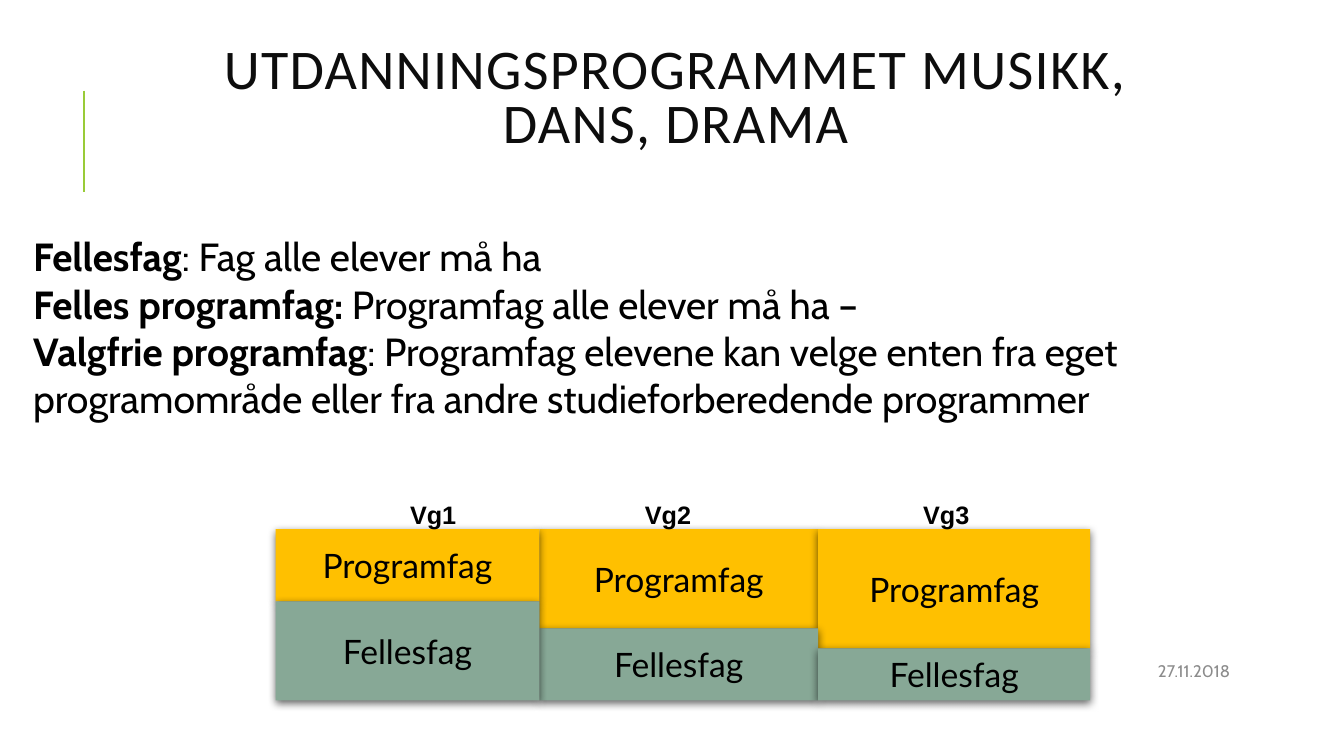
from dataclasses import dataclass

from lxml.etree import SubElement
from pptx import Presentation
from pptx.dml.color import RGBColor
from pptx.enum.shapes import MSO_CONNECTOR, MSO_SHAPE
from pptx.enum.text import MSO_ANCHOR, PP_ALIGN
from pptx.oxml.ns import qn
from pptx.util import Inches, Pt

COLS, ROWS = 80, 45


@dataclass(frozen=True)
class Theme:
    ink: str = "000000"
    head: str = "0D0D0D"
    faint: str = "8C8C8C"
    line: str = "99CB38"
    gold: str = "FFC000"
    sage: str = "87A896"
    title: int = 40
    body: int = 28
    block: int = 24
    label: int = 18
    date: int = 12


def write(frame, lines, font, size, color, align=PP_ALIGN.LEFT,
          anchor=MSO_ANCHOR.TOP, wrap=True, space=None, track=None):
    frame.word_wrap = wrap
    frame.vertical_anchor = anchor
    for place, line in enumerate(lines):
        para = frame.add_paragraph() if place else frame.paragraphs[0]
        para.alignment = align
        if space:
            para.line_spacing = space
        for text, bold in line:
            run = para.add_run()
            run.text = text
            run.font.name = font
            run.font.size = Pt(size)
            run.font.bold = bold
            run.font.color.rgb = RGBColor.from_string(color)
            if track:
                run.font._element.set("spc", str(track * 100))


class Board:
    def __init__(self, deck, theme):
        self.theme = theme
        self.wide = deck.slide_width / COLS
        self.high = deck.slide_height / ROWS
        self.shapes = deck.slides.add_slide(deck.slide_layouts[6]).shapes

    def scale(self, left, top, width, height):
        return (round(left * self.wide), round(top * self.high),
                round(width * self.wide), round(height * self.high))

    def text(self, area, lines, **style):
        box = self.shapes.add_textbox(*self.scale(*area))
        write(box.text_frame, lines, **style)

    def block(self, area, text, fill):
        box = self.shapes.add_shape(MSO_SHAPE.RECTANGLE, *self.scale(*area))
        box.fill.solid()
        box.fill.fore_color.rgb = RGBColor.from_string(fill)
        box.line.fill.background()
        self.shade(box)
        write(box.text_frame, [[(text, False)]], font="Lato",
              size=self.theme.block, color=self.theme.ink,
              align=PP_ALIGN.CENTER, anchor=MSO_ANCHOR.MIDDLE)

    def shade(self, box):
        box.shadow.inherit = False
        effect = box._element.spPr.find(qn("a:effectLst"))
        outer = SubElement(effect, qn("a:outerShdw"), blurRad=str(Pt(6)),
                           dist=str(Pt(2)), dir="5400000", rotWithShape="0")
        tint = SubElement(outer, qn("a:srgbClr"), val=self.theme.ink)
        SubElement(tint, qn("a:alpha"), val="60000")

    def rule(self, left, top, end):
        start = self.scale(left, top, left, end)
        line = self.shapes.add_connector(
            MSO_CONNECTOR.STRAIGHT, start[0], start[1], start[2], start[3])
        line.line.color.rgb = RGBColor.from_string(self.theme.line)
        line.line.width = Pt(1.5)
        SubElement(line._element.spPr, qn("a:effectLst"))


def main():
    deck = Presentation()
    deck.slide_width, deck.slide_height = Inches(13.33), Inches(7.5)
    theme = Theme()
    board = Board(deck, theme)

    board.rule(5, 5.4, 11.4)
    board.text((68.34, 38.76, 9.72, 2.4), [[("27.11.2018", False)]],
               font="Cabin", size=theme.date, color=theme.faint,
               anchor=MSO_ANCHOR.MIDDLE)
    board.text((11.64, 3.12, 57.18, 5.7),
               [[("UTDANNINGSPROGRAMMET MUSIKK, DANS, DRAMA", False)]],
               font="Calibri", size=theme.title, color=theme.head,
               align=PP_ALIGN.CENTER, anchor=MSO_ANCHOR.MIDDLE,
               space=0.8, track=1)

    top, base = 31.5, 41.7
    years = [("Vg2", 32.1, 16.6, 37.4, 37.8),
             ("Vg3", 48.7, 16.2, 38.6, 54.36),
             ("Vg1", 16.4, 15.7, 35.8, 23.82)]
    for name, left, width, split, mark in years:
        board.block((left, top, width, split - top), "Programfag", theme.gold)
        board.text((mark, 29.4, 3.96, 2.4), [[(name, True)]], font="Arial",
                   size=theme.label, color=theme.ink, wrap=False)
    for name, left, width, split, mark in years:
        board.block((left, split, width, base - split), "Fellesfag", theme.sage)

    board.text((1.38, 13.56, 73.56, 11.94), [
        [("Fellesfag", True), (": Fag alle elever må ha", False)],
        [("Felles programfag: ", True),
         ("Programfag alle elever må ha –", False)],
        [("Valgfrie programfag", True),
         (": Programfag elevene kan velge enten fra eget programområde "
          "eller fra andre studieforberedende programmer", False)],
    ], font="Cabin", size=theme.body, color=theme.ink)

    deck.save("out.pptx")


if __name__ == "__main__":
    main()
